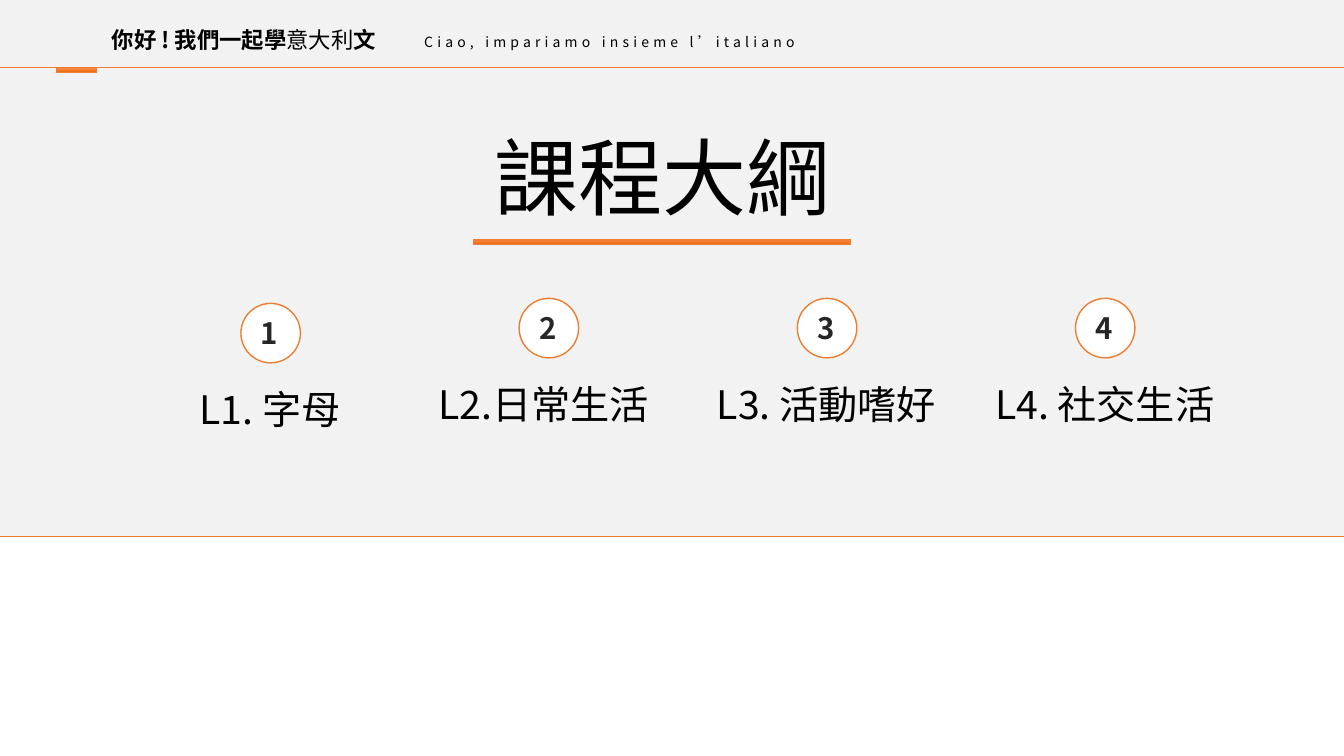
from copy import deepcopy

from pptx import Presentation
from pptx.dml.color import RGBColor
from pptx.enum.shapes import MSO_CONNECTOR as CONN, MSO_SHAPE as SHAPE
from pptx.enum.text import MSO_ANCHOR as ANCHOR, MSO_AUTO_SIZE as AUTO, PP_ALIGN as ALIGN
from pptx.oxml.ns import qn
from pptx.util import Pt

WHITE = RGBColor(0xFF, 0xFF, 0xFF)
BLACK = RGBColor(0x00, 0x00, 0x00)
DARK = RGBColor(0x26, 0x26, 0x26)
GREY = RGBColor(0xF2, 0xF2, 0xF2)
ORANGE = RGBColor(0xED, 0x7D, 0x31)
BAR_STOPS = [(0, RGBColor(0xF1, 0x8C, 0x57)),
             (0.5, RGBColor(0xF6, 0x7B, 0x28)),
             (1, RGBColor(0xE5, 0x6C, 0x19))]
FONT = "Noto Sans CJK SC"
WIDTH, HEIGHT = 960, 540
HEADER_Y, FOOTER_Y = 48.4, 383


class CourseSlide:
    def __init__(self, prs):
        self.s = prs.slides.add_slide(prs.slide_layouts[5])
        fill = self.s.background.fill
        fill.solid()
        fill.fore_color.rgb = GREY

    def format(self, p, size, color=BLACK, bold=False, spacing=0):
        """Set the paragraph font for Latin and East Asian text alike."""
        p.font.name = FONT
        p.font.size = Pt(size)
        p.font.bold = bold
        p.font.color.rgb = color
        rpr = p._p.pPr.find(qn("a:defRPr"))
        ea = deepcopy(rpr.find(qn("a:latin")))
        ea.tag = qn("a:ea")
        rpr.find(qn("a:latin")).addnext(ea)
        if spacing:
            for el in (rpr, *(r._r.get_or_add_rPr() for r in p.runs)):
                el.set("spc", str(spacing * 100))

    def title(self, text, x, y, w, h, size):
        sp = self.s.shapes.title
        sp.left, sp.top, sp.width, sp.height = Pt(x), Pt(y), Pt(w), Pt(h)
        tf = sp.text_frame
        tf.text = text
        tf.auto_size = AUTO.NONE
        tf.vertical_anchor = ANCHOR.TOP
        p = tf.paragraphs[0]
        p.alignment = ALIGN.CENTER
        self.format(p, size)

    def text(self, runs, x, y, w, h, size, align=ALIGN.LEFT, parent=None, **style):
        sp = (parent or self.s).shapes.add_textbox(Pt(x), Pt(y), Pt(w), Pt(h))
        tf = sp.text_frame
        tf.word_wrap = True
        tf.auto_size = AUTO.SHAPE_TO_FIT_TEXT
        p = tf.paragraphs[0]
        p.alignment = align
        for content in runs:
            p.add_run().text = content
        self.format(p, size, **style)
        return p

    def shape(self, kind, x, y, w, h, line=None, parent=None):
        sp = (parent or self.s).shapes.add_shape(kind, Pt(x), Pt(y), Pt(w), Pt(h))
        sp.shadow.inherit = False
        sp.fill.solid()
        sp.fill.fore_color.rgb = WHITE
        if line:
            sp.line.color.rgb = ORANGE
            sp.line.width = Pt(line)
        else:
            sp.line.fill.background()
        return sp

    def bar(self, x, y, w, h):
        fill = self.shape(SHAPE.RECTANGLE, x, y, w, h, line=0.5).fill
        fill.gradient()
        fill.gradient_angle = 270
        first = fill.gradient_stops[0]._gs
        first.addnext(deepcopy(first))
        for stop, (position, color) in zip(fill.gradient_stops, BAR_STOPS):
            stop.position = position
            stop.color.rgb = color

    def rule(self, y):
        line = self.s.shapes.add_connector(CONN.STRAIGHT, 0, Pt(y), Pt(WIDTH), Pt(y))
        line.line.color.rgb = ORANGE
        line.line.width = Pt(0.5)
        sp_pr = line._element.spPr
        sp_pr.append(sp_pr.makeelement(qn("a:effectLst"), {}))

    def lesson(self, number, label, x, y):
        """Group a numbered circle with the lesson name below it."""
        group = self.s.shapes.add_group_shape()
        self.text([label], x, y + 54.7, 191.5, 41, 28, ALIGN.CENTER, group)
        self.shape(SHAPE.OVAL, x + 74.9, y, 42.5, 42.5, 1, group)
        self.text([str(number)], x + 82.1, y + 5, 28, 32.4, 21, parent=group,
                  color=DARK, bold=True)


def main():
    prs = Presentation()
    prs.slide_width, prs.slide_height = Pt(WIDTH), Pt(HEIGHT)
    slide = CourseSlide(prs)

    slide.shape(SHAPE.RECTANGLE, 0, FOOTER_Y, WIDTH, HEIGHT - FOOTER_Y)
    greeting = slide.text(["你好 ! 我們一起學", "意大利", "文"],
                          72.7, 15.1, 248.4, 26.6, 16, bold=True)
    language = greeting.runs[1].font
    language.name = "Calibri"
    language.bold = False
    slide.text(["Ciao, impariamo insieme l’italiano"],
               295.9, 20.2, 605.5, 19.4, 10, spacing=3)
    slide.rule(HEADER_Y)
    slide.bar(40.6, HEADER_Y, 28.4, 3.2)

    slide.title("課程大綱", 345.6, 85.7, 254.9, 79.9, 60)
    slide.bar(338.4, 170.7, 269.3, 3.8)
    slide.rule(FOOTER_Y)

    lessons = [("L1. 字母", 216.7), ("L2.日常生活 ", 213.1),
               ("L3. 活動嗜好", 213.1), ("L4. 社交生活", 213.1)]
    for i, (label, y) in enumerate(lessons):
        slide.lesson(i + 1, label, 97.2 + 198.7 * i, y)

    prs.save("out.pptx")


if __name__ == "__main__":
    main()
